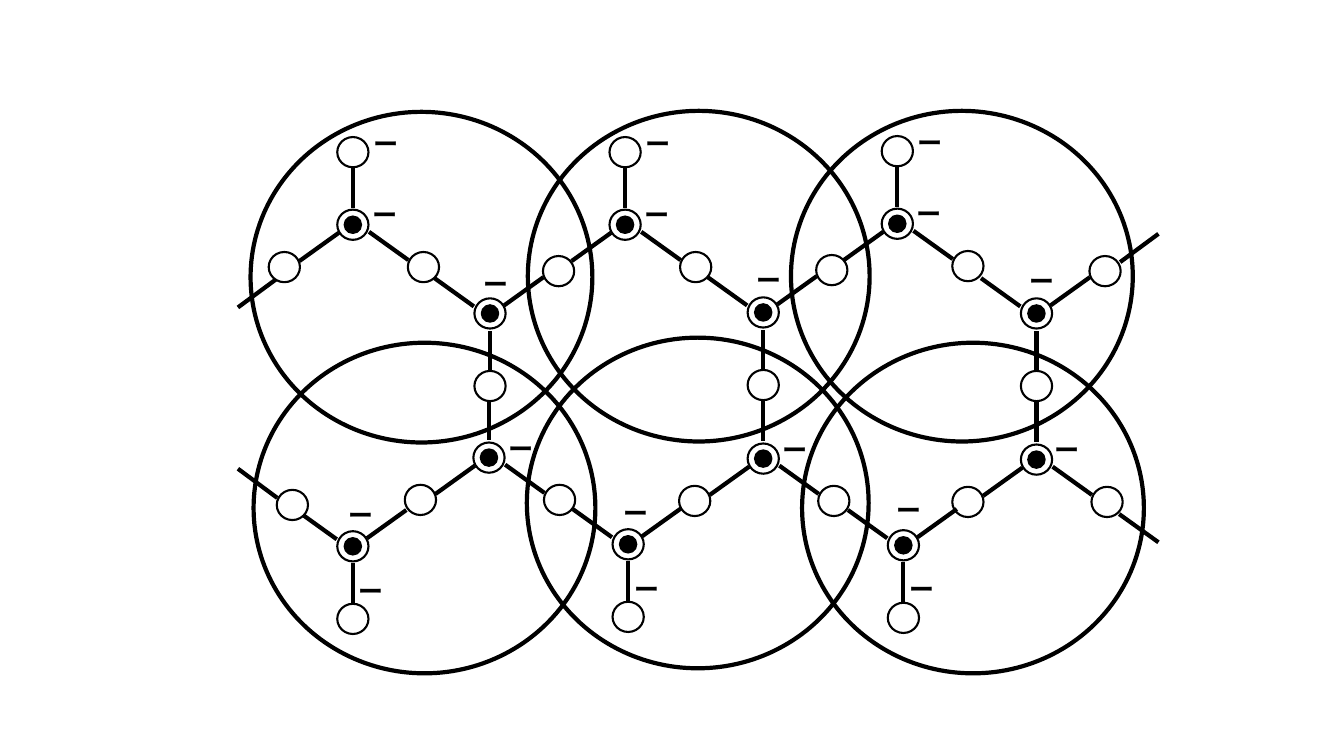
from dataclasses import dataclass

from lxml import etree
from pptx import Presentation
from pptx.dml.color import RGBColor
from pptx.enum import shapes, text
from pptx.oxml import ns
from pptx.util import Inches, Pt


@dataclass(frozen=True)
class Theme:
    ink: RGBColor = RGBColor(0, 0, 0)
    paper: RGBColor = RGBColor(255, 255, 255)
    font: str = "TeX Gyre Schola"
    size: int = 18
    thin: float = 1
    rim: float = 1.5
    bold: float = 3


THEME = Theme()
RING = (0.31, 0.3)
DOT = (0.17, 0.17)
CELL = (3.39, 3.28)
MARK = (0.45, 0.28)

# Offsets from the centre of a unit whose stem points up
STEM = (0, -0.72)
NEAR = (-0.68, 0.42)
FAR = (0.7, 0.42)
BONDS = (
    ((0, -0.57), (0, -0.17)),
    ((-0.53, 0.36), (-0.14, 0.08)),
    ((0.16, 0.07), (0.55, 0.35)),
)

# Turn, oxygen offsets, then centre and charge offsets of each unit
ROWS = (
    (1, (STEM, FAR), (
        (3.5, 2.23, ((0.32, -0.16), (0.33, -0.87))),
        (6.2, 2.23, ((0.32, -0.16), (0.33, -0.87))),
        (8.9, 2.22, ((0.32, -0.16), (0.33, -0.87))),
    )),
    (-1, (STEM, NEAR), (
        (4.86, 3.11, ((0.06, -0.23),)),
        (7.57, 3.1, ((0.05, -0.26),)),
        (10.28, 3.11, ((0.05, -0.26),)),
    )),
    (1, (NEAR, FAR), (
        (4.85, 4.54, ((0.32, -0.15),)),
        (7.57, 4.55, ((0.32, -0.15),)),
        (10.28, 4.56, ((0.31, -0.16),)),
    )),
    (-1, (STEM,), (
        (3.5, 5.42, ((0.08, -0.25), (0.18, 0.51))),
        (6.23, 5.4, ((0.08, -0.25), (0.18, 0.51))),
        (8.96, 5.41, ((0.05, -0.29), (0.18, 0.5))),
    )),
)
ENDS = ((2.82, 2.65), (2.9, 5.01))
TAILS = (
    ((2.36, 3.05), (2.74, 2.77)),
    ((11.49, 2.32), (11.11, 2.6)),
    ((11.1, 5.1), (11.49, 5.38)),
    ((2.36, 4.65), (2.75, 4.94)),
)
CELLS = (
    (6.93, 2.74), (9.54, 2.74), (9.65, 5.04),
    (6.92, 4.99), (4.18, 2.75), (4.21, 5.04),
)


def box(mid, size):
    """Give left, top, width and height of a box around its middle."""
    return [Inches(v) for v in (mid[0] - size[0] / 2, mid[1] - size[1] / 2, *size)]


def add_round(slide, mid, size, width, fill=None):
    oval = slide.shapes.add_shape(shapes.MSO_SHAPE.OVAL, *box(mid, size))
    oval.shadow.inherit = False
    if fill is None:
        oval.fill.background()
    else:
        oval.fill.solid()
        oval.fill.fore_color.rgb = fill
    oval.line.color.rgb = THEME.ink
    oval.line.width = Pt(width)


def add_atom(slide, mid):
    add_round(slide, mid, RING, THEME.rim, THEME.paper)


def add_bond(slide, start, end):
    bond = slide.shapes.add_connector(
        shapes.MSO_CONNECTOR.STRAIGHT, *(Inches(v) for v in (*start, *end)))
    bond.line.color.rgb = THEME.ink
    bond.line.width = Pt(THEME.bold)
    etree.SubElement(bond._element.spPr, ns.qn("a:effectLst"))


def add_charge(slide, mid, turn):
    mark = slide.shapes.add_textbox(*box(mid, MARK))
    mark.rotation = 0 if turn > 0 else 180
    frame = mark.text_frame
    frame.text = "ー"
    frame.auto_size = text.MSO_AUTO_SIZE.SHAPE_TO_FIT_TEXT
    font = frame.paragraphs[0].runs[0].font
    font.name = THEME.font
    font.size = Pt(THEME.size)
    font.bold = True
    font.color.rgb = THEME.ink


def add_unit(slide, x, y, turn, atoms, marks):
    """Draw a silicon centre with its oxygens, bonds and charges."""
    def spot(shift):
        return x + turn * shift[0], y + turn * shift[1]

    for atom in atoms:
        add_atom(slide, spot(atom))
    add_atom(slide, (x, y))
    add_round(slide, (x, y), DOT, THEME.thin, THEME.ink)
    for start, end in BONDS:
        add_bond(slide, spot(start), spot(end))
    for right, down in marks:
        add_charge(slide, (x + right, y + down), turn)


def main():
    deck = Presentation()
    deck.slide_width = Inches(13.33)
    deck.slide_height = Inches(7.5)
    slide = deck.slides.add_slide(deck.slide_layouts[6])
    for turn, atoms, units in ROWS:
        for x, y, marks in units:
            add_unit(slide, x, y, turn, atoms, marks)
    for start, end in TAILS:
        add_bond(slide, start, end)
    for mid in ENDS:
        add_atom(slide, mid)
    for mid in CELLS:
        add_round(slide, mid, CELL, THEME.bold)
    deck.save("out.pptx")


if __name__ == "__main__":
    main()
